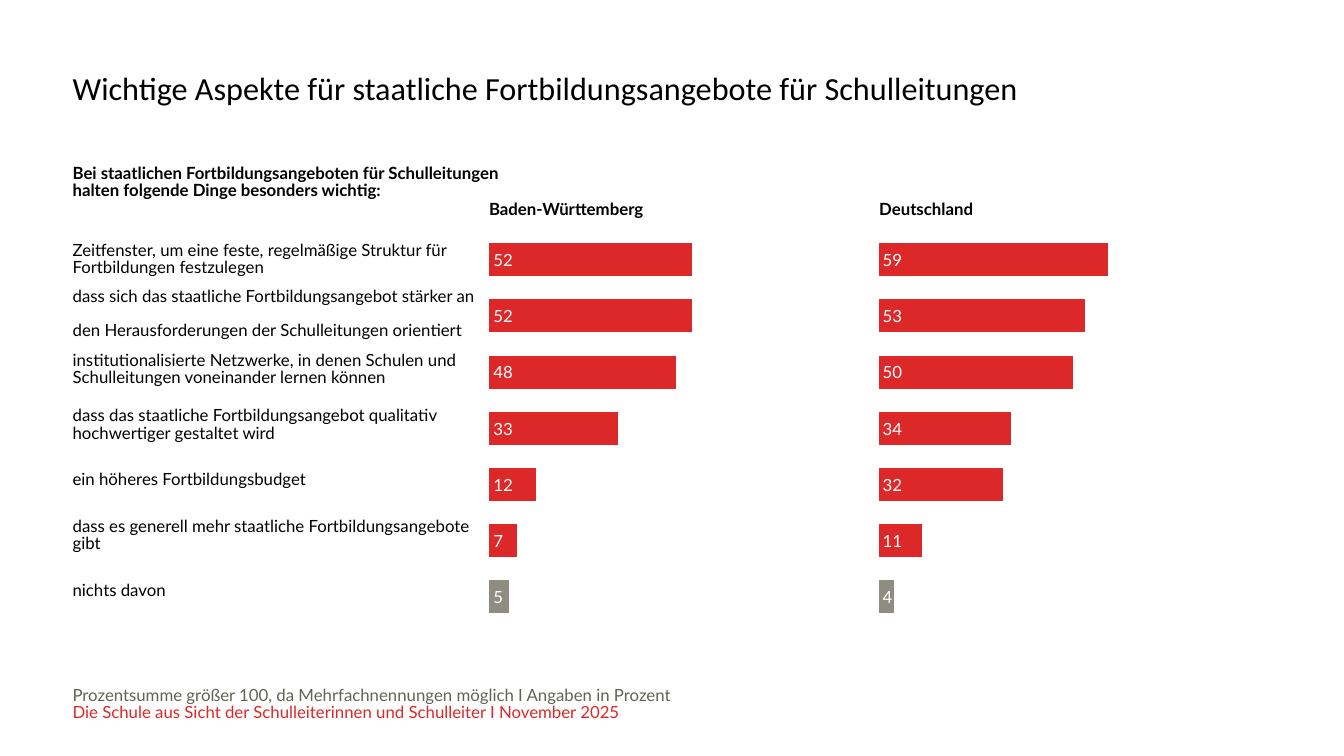
from collections import namedtuple

from pptx import Presentation
from pptx.chart.data import CategoryChartData
from pptx.dml.color import RGBColor
from pptx.enum.chart import XL_CHART_TYPE, XL_LABEL_POSITION
from pptx.enum.text import MSO_ANCHOR, MSO_AUTO_SIZE, PP_ALIGN
from pptx.oxml import parse_xml
from pptx.oxml.ns import nsdecls
from pptx.util import Inches, Pt

BAR_STACKED = XL_CHART_TYPE.BAR_STACKED
INSIDE_BASE = XL_LABEL_POSITION.INSIDE_BASE
TOP, MIDDLE, BOTTOM = MSO_ANCHOR.TOP, MSO_ANCHOR.MIDDLE, MSO_ANCHOR.BOTTOM
LEFT = PP_ALIGN.LEFT
NO_AUTOFIT = MSO_AUTO_SIZE.NONE

BLACK = RGBColor(0x00, 0x00, 0x00)
WHITE = RGBColor(0xFF, 0xFF, 0xFF)
RED = RGBColor(0xDC, 0x28, 0x28)
GREY = RGBColor(0x8F, 0x8D, 0x81)
DARK_GREY = RGBColor(0x63, 0x62, 0x55)

TEXT_FONT, TITLE_FONT = "Lato", "Calibri"
TEXT_SIZE = 12
MARGIN_LEFT = 0.72

Box = namedtuple("Box", "left top width height")

TITLE = "Wichtige Aspekte für staatliche Fortbildungsangebote für Schulleitungen"
QUESTION = [
    "Bei staatlichen Fortbildungsangeboten für Schulleitungen",
    "halten folgende Dinge besonders wichtig:",
]
REGIONS = ["Baden-Württemberg", "", "Deutschland"]
ASPECTS = [
    (["Zeitfenster, um eine feste, regelmäßige Struktur für Fortbildungen festzulegen"], 52, 59),
    (["dass sich das staatliche Fortbildungsangebot stärker an",
      "den Herausforderungen der Schulleitungen orientiert"], 52, 53),
    (["institutionalisierte Netzwerke, in denen Schulen und "
      "Schulleitungen voneinander lernen können"], 48, 50),
    (["dass das staatliche Fortbildungsangebot qualitativ hochwertiger gestaltet wird"], 33, 34),
    (["ein höheres Fortbildungsbudget"], 12, 32),
    (["dass es generell mehr staatliche Fortbildungsangebote gibt"], 7, 11),
    (["nichts davon"], 5, 4),
]
FOOTNOTE = "Prozentsumme größer 100, da Mehrfachnennungen möglich I Angaben in Prozent"
SURVEY = "Die Schule aus Sicht der Schulleiterinnen und Schulleiter I November 2025"


def in_inches(box):
    """Convert a box to lengths for python-pptx."""
    return [Inches(length) for length in box]


def write(frame, lines, colors=(BLACK,), size=TEXT_SIZE, font=TEXT_FONT,
          bold=False, spacing=0.85, gap=0):
    """Write one paragraph per line, with the last colour repeated as needed."""
    frame.word_wrap = True
    for index, line in enumerate(lines):
        paragraph = frame.add_paragraph() if index else frame.paragraphs[0]
        paragraph.alignment = LEFT
        paragraph.line_spacing = spacing
        paragraph.space_before = Pt(gap if index else 0)
        run = paragraph.add_run()
        run.text = line
        run.font.name = font
        run.font.size = Pt(size)
        run.font.bold = bold
        run.font.color.rgb = colors[min(index, len(colors) - 1)]


def set_margins(holder, vertical=0):
    """Remove the side margins and set the upper and lower ones."""
    holder.margin_left = holder.margin_right = 0
    holder.margin_top = holder.margin_bottom = Inches(vertical)


def add_title(slide, box):
    """Move and fill the title placeholder."""
    title = slide.shapes.title
    title.left, title.top, title.width, title.height = in_inches(box)
    frame = title.text_frame
    frame.auto_size = NO_AUTOFIT
    frame.vertical_anchor = TOP
    set_margins(frame)
    write(frame, [TITLE], size=23, font=TITLE_FONT, spacing=0.9)


def add_footer(slide, box):
    """Add the footnote and the survey line."""
    frame = slide.shapes.add_textbox(*in_inches(box)).text_frame
    set_margins(frame)
    frame.margin_top = Inches(0.4 * box.height)
    write(frame, [FOOTNOTE, SURVEY], colors=(DARK_GREY, RED))


def add_plain_table(slide, box, rows, widths, anchor, vertical=0, fill=None, **text_format):
    """Add an unstyled table whose cells each hold a list of lines."""
    table = slide.shapes.add_table(len(rows), len(widths), *in_inches(box)).table
    table.first_row = table.horz_banding = False
    for column, share in zip(table.columns, widths):
        column.width = Inches(box.width * share)
    for row_index, row in enumerate(rows):
        for column_index, lines in enumerate(row):
            cell = table.cell(row_index, column_index)
            if fill is None:
                cell.fill.background()
            else:
                cell.fill.solid()
                cell.fill.fore_color.rgb = fill
            cell.vertical_anchor = anchor
            set_margins(cell, vertical)
            write(cell.text_frame, lines, **text_format)


def label_values(series):
    """Show the values in white at the base of the bars."""
    labels = series.data_labels
    labels.show_value = True
    labels.position = INSIDE_BASE
    labels.font.name = TEXT_FONT
    labels.font.size = Pt(TEXT_SIZE)
    labels.font.color.rgb = WHITE


def set_plot_layout(chart, box):
    """Place the inner plot area by shares of the chart."""
    plot_area = chart.element.xpath(".//c:plotArea")[0]
    for layout in plot_area.xpath("./c:layout"):
        plot_area.remove(layout)
    places = "".join(f'<c:{tag} val="{share}"/>' for tag, share in zip("xywh", box))
    plot_area.insert(0, parse_xml(
        f'<c:layout {nsdecls("c")}><c:manualLayout><c:layoutTarget val="inner"/>'
        f'<c:xMode val="edge"/><c:yMode val="edge"/>{places}</c:manualLayout></c:layout>'))


def add_bars(slide, box):
    """Add both groups of bars as one stacked chart with a clear spacer."""
    data = CategoryChartData()
    data.categories = [str(number) for number in range(1, len(ASPECTS) + 1)]
    state_values = [state for _, state, _ in ASPECTS]
    data.add_series("Series 1", state_values)
    data.add_series("Series 2", [100 - value for value in state_values])
    data.add_series("Series 3", [country for _, _, country in ASPECTS])
    chart = slide.shapes.add_chart(BAR_STACKED, *in_inches(box), data).chart
    chart.has_legend = chart.has_title = False
    chart.font.name = TEXT_FONT
    chart.font.size = Pt(TEXT_SIZE)
    chart.font.color.rgb = BLACK

    chart.category_axis.reverse_order = True
    chart.category_axis.visible = False
    value_axis = chart.value_axis
    value_axis.minimum_scale, value_axis.maximum_scale = 0, 170
    value_axis.major_unit = 10
    value_axis.has_major_gridlines = False
    value_axis.visible = False

    plot = chart.plots[0]
    plot.gap_width, plot.overlap = 70, 100
    plot.vary_by_categories = False
    state_bars, spacer, country_bars = plot.series
    spacer.format.fill.background()
    for bars in (state_bars, country_bars):
        bars.format.fill.solid()
        bars.format.fill.fore_color.rgb = RED
        last_fill = bars.points[len(ASPECTS) - 1].format.fill
        last_fill.solid()
        last_fill.fore_color.rgb = GREY
        label_values(bars)
    set_plot_layout(chart, Box(0.048, 0.107, 0.844, 0.819))


def build_survey_slide(presentation):
    """Build the slide with aspects on the left and two groups of bars."""
    slide = presentation.slides.add_slide(presentation.slide_layouts[5])
    add_title(slide, Box(MARGIN_LEFT, 0.72, 12.21, 0.91))
    add_footer(slide, Box(MARGIN_LEFT, 6.49, 12.33, 0.84))
    add_bars(slide, Box(4.48, 1.79, 7.78, 4.76))
    add_plain_table(slide, Box(MARGIN_LEFT, 1.64, 7.26, 0.34), [[QUESTION]], [1],
                    BOTTOM, bold=True)
    add_plain_table(slide, Box(MARGIN_LEFT, 2.3, 4.03, 3.84),
                    [[lines] for lines, _, _ in ASPECTS], [1], MIDDLE, gap=TEXT_SIZE)
    add_plain_table(slide, Box(4.85, 1.93, 6.45, 0.28), [[[name] for name in REGIONS]],
                    [0.4, 0.2, 0.4], TOP, vertical=0.04, fill=WHITE, bold=True, spacing=1.0)


def main():
    """Create and save the presentation."""
    presentation = Presentation()
    presentation.slide_width, presentation.slide_height = Inches(13.33), Inches(7.5)
    build_survey_slide(presentation)
    presentation.save("out.pptx")


if __name__ == "__main__":
    main()
